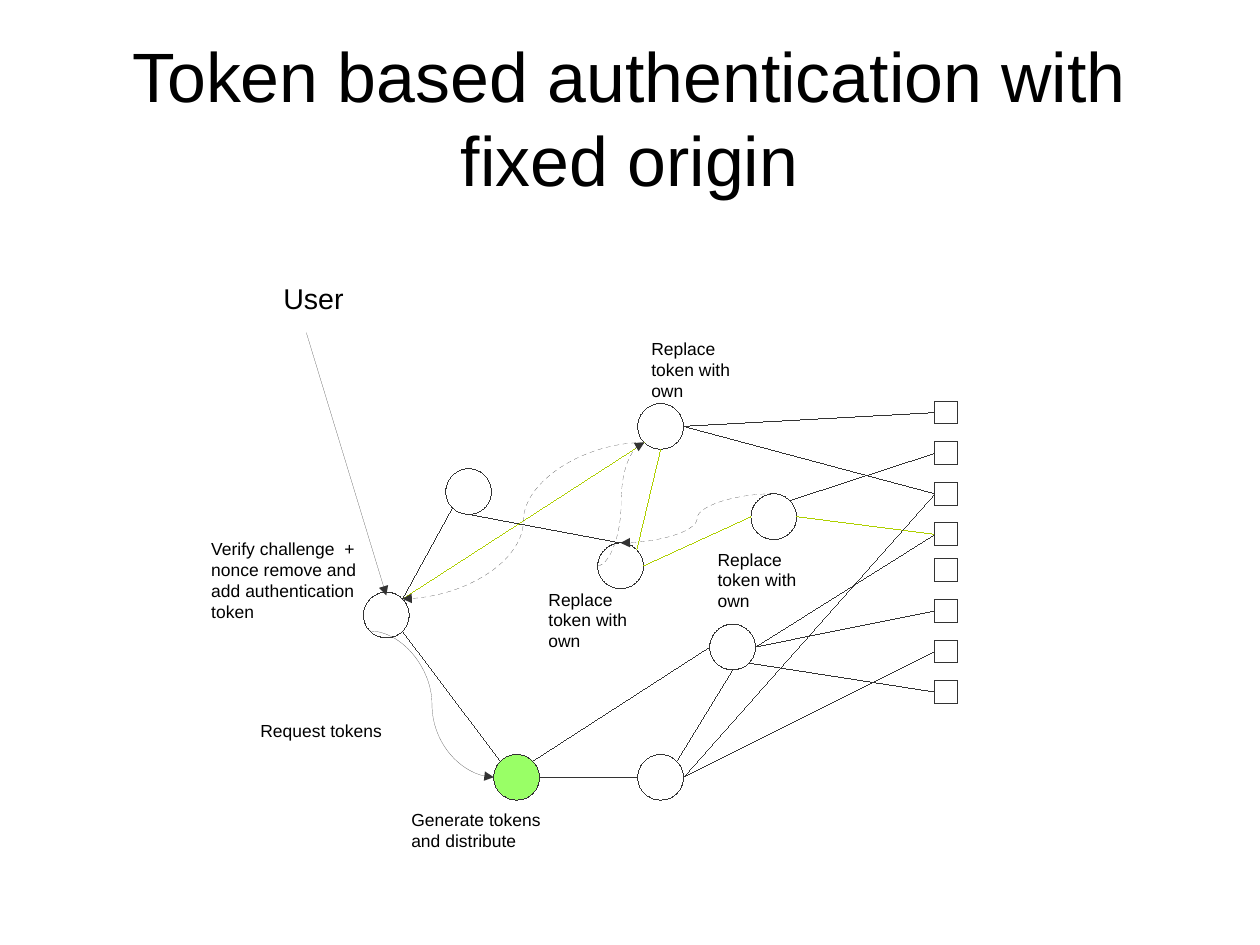
import math

from pptx import Presentation
from pptx.dml.color import RGBColor
from pptx.enum.dml import MSO_LINE
from pptx.enum.shapes import MSO_CONNECTOR, MSO_SHAPE
from pptx.enum.text import MSO_ANCHOR, MSO_AUTO_SIZE, PP_ALIGN
from pptx.oxml.ns import qn
from pptx.util import Cm, Inches, Pt
from lxml import etree

STRAIGHT, CURVE = MSO_CONNECTOR.STRAIGHT, MSO_CONNECTOR.CURVE
OVAL, RECTANGLE = MSO_SHAPE.OVAL, MSO_SHAPE.RECTANGLE
DASHED = MSO_LINE.DASH
MIDDLE, TOP = MSO_ANCHOR.MIDDLE, MSO_ANCHOR.TOP
CENTER, LEFT = PP_ALIGN.CENTER, PP_ALIGN.LEFT
NO_AUTOFIT = MSO_AUTO_SIZE.NONE

FONT = "Arial"
BLACK, DARK, GREEN, LIME = "000000", "333333", "99FF66", "AECF00"
NODE_SIZE, SERVER_SIZE = 0.4, 0.2
SERVER_LEFT = 8.18
SERVER_PITCH = 1.42 / 4

# Top left corner of each circle
NODES = {
    "entry": (3.18, 5.18),
    "middle": (5.23, 4.75),
    "upper": (3.9, 4.1),
    "lower": (6.21, 5.46),
    "top": (5.58, 3.53),
    "exit": (6.57, 4.32),
    "origin": (4.32, 6.6),
    "bottom": (5.58, 6.6),
}
# Two groups of four servers, one below the other
SERVER_TOPS = [start + SERVER_PITCH * step
               for start in (3.51, 4.89) for step in range(4)]
ANGLES = {"E": 0, "SE": 45, "S": 90, "SW": 135,
          "W": 180, "NW": 225, "N": 270, "NE": 315}

# Links from circle to circle: name, side, name, side, colour
NODE_LINKS = [
    ("entry", "SE", "origin", "NW", DARK),
    ("entry", "NE", "top", "SW", LIME),
    ("middle", "NE", "top", "S", LIME),
    ("origin", "NE", "lower", "W", DARK),
    ("upper", "S", "middle", "N", DARK),
    ("middle", "E", "exit", "W", LIME),
    ("origin", "E", "bottom", "W", DARK),
    ("bottom", "NE", "lower", "S", DARK),
    ("entry", "NE", "upper", "SW", DARK),
]
# Links from circle to server: name, side, server number, colour
SERVER_LINKS = [
    ("top", "E", 0, DARK),
    ("top", "E", 2, DARK),
    ("exit", "E", 3, LIME),
    ("exit", "NE", 1, DARK),
    ("lower", "E", 3, DARK),
    ("lower", "E", 5, DARK),
    ("lower", "SE", 7, DARK),
    ("bottom", "E", 6, DARK),
    ("bottom", "E", 2, DARK),
]
# Curved token flows: name, side, name, side, dash
TOKEN_FLOWS = [
    ("entry", "SW", "origin", "W", None),
    ("top", "SW", "entry", "NE", DASHED),
    ("middle", "W", "top", "SW", DASHED),
    ("exit", "N", "middle", "N", DASHED),
]
REPLACE = "Replace  token with own"
LABELS = [
    ("Request tokens", 2.18, 6.25, 1.34, 0.27),
    ("Generate tokens and distribute", 3.5, 7.03, 1.5, 0.45),
    ("Verify challenge  + nonce remove and add authentication token",
     1.75, 4.66, 1.7, 0.79),
    (REPLACE, 4.7, 5.1, 1, 0.62),
    (REPLACE, 6.18, 4.75, 1.02, 0.65),
    (REPLACE, 5.6, 2.91, 1, 0.62),
]


def color(hex_string):
    return RGBColor.from_string(hex_string)


def write_text(shape, text, size=11, align=LEFT, anchor=TOP,
               insets=(0.1, 0.05), wrap=True):
    frame = shape.text_frame
    frame.auto_size = NO_AUTOFIT
    frame.word_wrap = wrap
    frame.vertical_anchor = anchor
    frame.margin_left = frame.margin_right = Inches(insets[0])
    frame.margin_top = frame.margin_bottom = Inches(insets[1])
    paragraph = frame.paragraphs[0]
    paragraph.alignment = align
    run = paragraph.add_run()
    run.text = text
    run.font.name = FONT
    run.font.size = Pt(size)
    run.font.color.rgb = color(BLACK)


def add_label(slide, text, left, top, width, height, **text_format):
    box = slide.shapes.add_textbox(
        Inches(left), Inches(top), Inches(width), Inches(height))
    write_text(box, text, **text_format)


def remove_theme_style(shape):
    """Drop the theme style, so that outlines become hairlines."""
    style = shape.element.find(qn("p:style"))
    shape.element.remove(style)


def add_outline_shape(slide, kind, left, top, size, fill=None):
    shape = slide.shapes.add_shape(
        kind, Inches(left), Inches(top), Inches(size), Inches(size))
    remove_theme_style(shape)
    shape.shadow.inherit = False
    if fill:
        shape.fill.solid()
        shape.fill.fore_color.rgb = color(fill)
    else:
        shape.fill.background()
    shape.line.color.rgb = color(DARK)


def add_link(slide, start, end, kind=STRAIGHT, line_color=DARK,
             dash=None, arrow=False):
    points = [Inches(value) for value in (*start, *end)]
    connector = slide.shapes.add_connector(kind, *points)
    remove_theme_style(connector)
    connector.line.color.rgb = color(line_color)
    if dash:
        connector.line.dash_style = dash
    properties = connector.element.spPr
    if arrow:
        outline = properties.find(qn("a:ln"))
        etree.SubElement(outline, qn("a:tailEnd"), type="triangle")
    etree.SubElement(properties, qn("a:effectLst"))


def node_point(name, side):
    left, top = NODES[name]
    radius = NODE_SIZE / 2
    angle = math.radians(ANGLES[side])
    return (left + radius + radius * math.cos(angle),
            top + radius + radius * math.sin(angle))


def server_point(number):
    return SERVER_LEFT, SERVER_TOPS[number] + SERVER_SIZE / 2


def add_title(slide, text):
    title = slide.shapes.title
    title.left, title.top = Inches(0.55), Inches(0.33)
    title.width, title.height = Inches(9.92), Inches(1.38)
    write_text(title, text, size=44, align=CENTER, anchor=MIDDLE,
               insets=(0, 0))


def main():
    presentation = Presentation()
    presentation.slide_width = Cm(28)
    presentation.slide_height = Cm(21)
    slide = presentation.slides.add_slide(presentation.slide_layouts[5])
    add_title(slide, "Token based authentication with fixed origin")

    # Circles and servers
    for name, (left, top) in NODES.items():
        fill = GREEN if name == "origin" else None
        add_outline_shape(slide, OVAL, left, top, NODE_SIZE, fill)
    for top in SERVER_TOPS:
        add_outline_shape(slide, RECTANGLE, SERVER_LEFT, top, SERVER_SIZE)

    # Network links
    for source, side, target, target_side, line_color in NODE_LINKS:
        add_link(slide, node_point(source, side),
                 node_point(target, target_side), line_color=line_color)
    for source, side, number, line_color in SERVER_LINKS:
        add_link(slide, node_point(source, side), server_point(number),
                 line_color=line_color)

    # User request and token flows
    add_link(slide, (2.68, 2.91), (3.38, 5.21), arrow=True)
    for source, side, target, target_side, dash in TOKEN_FLOWS:
        add_link(slide, node_point(source, side),
                 node_point(target, target_side),
                 kind=CURVE, dash=dash, arrow=True)

    # Labels
    add_label(slide, "User", 2.38, 2.41, 0.72, 0.38, size=18, wrap=False)
    for label in LABELS:
        add_label(slide, *label)

    presentation.save("out.pptx")


if __name__ == "__main__":
    main()
